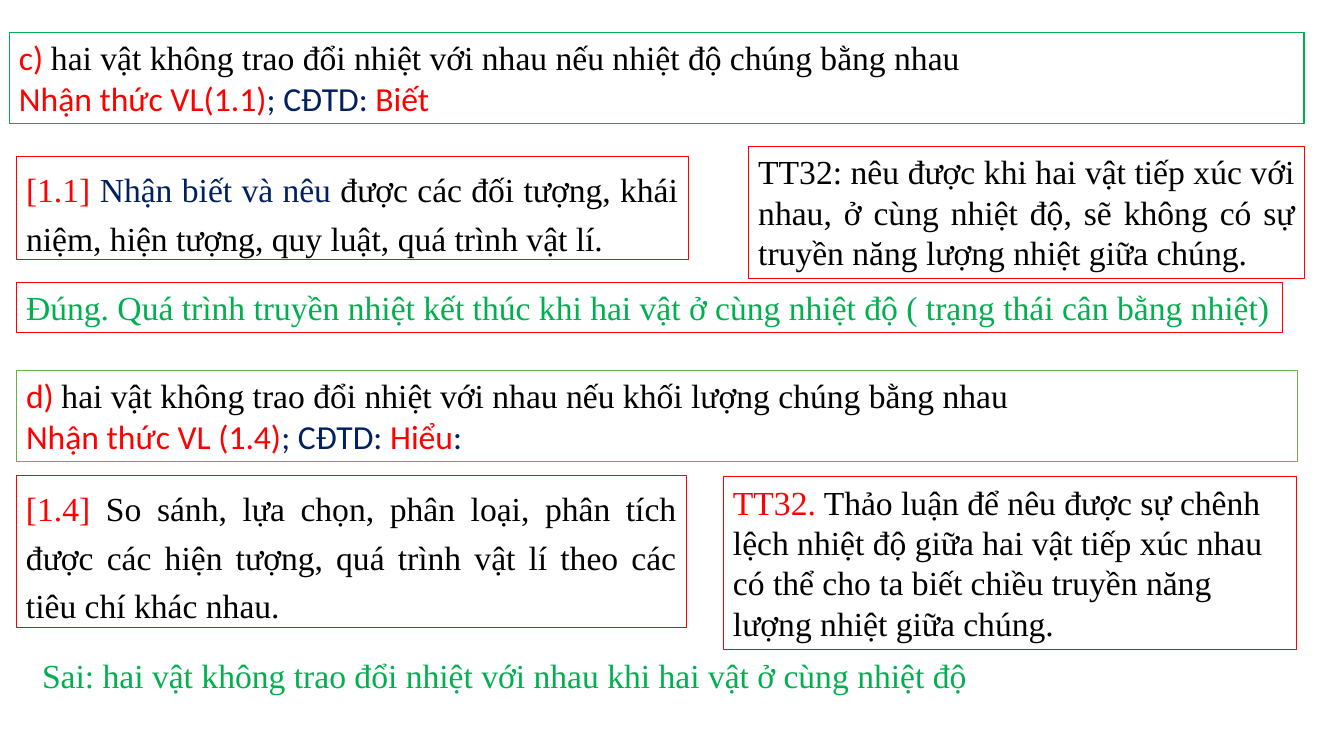
from pptx import Presentation
from pptx.dml.color import RGBColor
from pptx.enum.shapes import MSO_SHAPE as Preset
from pptx.enum.text import MSO_ANCHOR as Anchor, MSO_AUTO_SIZE as AutoSize, PP_ALIGN as Align
from pptx.util import Pt

RED, NAVY, GREEN, LIME, BLACK = "FF0000", "002060", "00B050", "70AD47", "000000"
SANS, SERIF = "Calibri", "Times New Roman"
JUSTIFIED = {"alignment": Align.JUSTIFY}
SPACED = {**JUSTIFIED, "line_spacing": 1.2, "space_after": Pt(8)}


def color(value):
    return RGBColor.from_string(value)


class Page:
    size = Pt(24)
    border = Pt(0.75)

    def __init__(self, deck):
        self.shapes = deck.slides.add_slide(deck.slide_layouts[6]).shapes

    def add_text(self, shape, paragraphs, layout):
        """Fill the shape with paragraphs, each a list of (text, colour, font)."""
        frame = shape.text_frame
        settings = {"word_wrap": True, "auto_size": AutoSize.SHAPE_TO_FIT_TEXT,
                    "vertical_anchor": Anchor.TOP}
        for name, value in settings.items():
            setattr(frame, name, value)
        for index, spans in enumerate(paragraphs):
            para = frame.add_paragraph() if index else frame.paragraphs[0]
            for name, value in {"alignment": Align.LEFT, **layout}.items():
                setattr(para, name, value)
            for text, ink, font in spans:
                span = para.add_run()
                span.text = text
                span.font.name, span.font.size = font, self.size
                span.font.color.rgb = color(ink)

    def framed(self, bounds, border, paragraphs, layout={}):
        box = self.shapes.add_shape(Preset.RECTANGLE, *map(Pt, bounds))
        box.shadow.inherit = False
        box.fill.background()
        box.line.color.rgb = color(border)
        box.line.width = self.border
        self.add_text(box, paragraphs, layout)

    def plain(self, bounds, paragraphs, layout={}):
        self.add_text(self.shapes.add_textbox(*map(Pt, bounds)), paragraphs, layout)

    def statement(self, bounds, border, letter, claim, skill, level, ending=""):
        """A lettered claim above its skill code and thinking level."""
        rating = [(skill, RED, SANS), ("; CĐTD: ", NAVY, SANS), (level, RED, SANS)]
        if ending:
            rating.append((ending, NAVY, SANS))
        self.framed(bounds, border,
                    [[(letter, RED, SANS), (claim, BLACK, SERIF)], rating])


def main():
    deck = Presentation()
    deck.slide_width, deck.slide_height = Pt(960), Pt(540)
    page = Page(deck)
    left = 11.5

    page.statement((6.5, 23, 925, 65.5), GREEN, "c) ",
                   "hai vật không trao đổi nhiệt với nhau nếu nhiệt độ chúng bằng nhau",
                   "Nhận thức VL(1.1)", "Biết")
    page.statement((left, 264.5, 915, 65.5), LIME, "d) ",
                   "hai vật không trao đổi nhiệt với nhau nếu khối lượng chúng bằng nhau",
                   "Nhận thức VL (1.4)", "Hiểu", ":")

    notes = [
        ((left, 111.5, 480, 74), SPACED,
         [("[1.1] ", RED), ("Nhận biết và nêu ", NAVY),
          ("được các đối tượng, khái niệm, hiện tượng, quy luật, quá trình vật lí.", BLACK)]),
        ((left, 339.5, 479, 108.5), SPACED,
         [("[1.4] ", RED),
          ("So sánh, lựa chọn, phân loại, phân tích được các hiện tượng, "
           "quá trình vật lí theo các tiêu chí khác nhau.", BLACK)]),
        ((left, 201.5, 904.5, 36), JUSTIFIED,
         [("Đúng. Quá trình truyền nhiệt kết thúc khi hai vật ở cùng nhiệt độ "
           "( trạng thái cân bằng nhiệt)", GREEN)]),
        ((534.5, 104.5, 397.5, 94.5), JUSTIFIED,
         [("TT32: nêu được khi hai vật tiếp xúc với nhau, ở cùng nhiệt độ, "
           "sẽ không có sự truyền năng lượng nhiệt giữa chúng.", BLACK)]),
        ((516.5, 340.5, 409.5, 123.5), {},
         [("TT32.", RED),
          (" Thảo luận để nêu được sự chênh lệch nhiệt độ giữa hai vật tiếp xúc nhau "
           "có thể cho ta biết chiều truyền năng lượng nhiệt giữa chúng.", BLACK)]),
    ]
    for bounds, layout, spans in notes:
        page.framed(bounds, RED, [[(*span, SERIF) for span in spans]], layout)

    page.plain((23, 464.5, 739.5, 36), [[
        ("Sai: hai vật không trao đổi nhiệt với nhau khi hai vật ở cùng nhiệt độ",
         GREEN, SERIF)]])
    deck.save("out.pptx")


if __name__ == "__main__":
    main()
